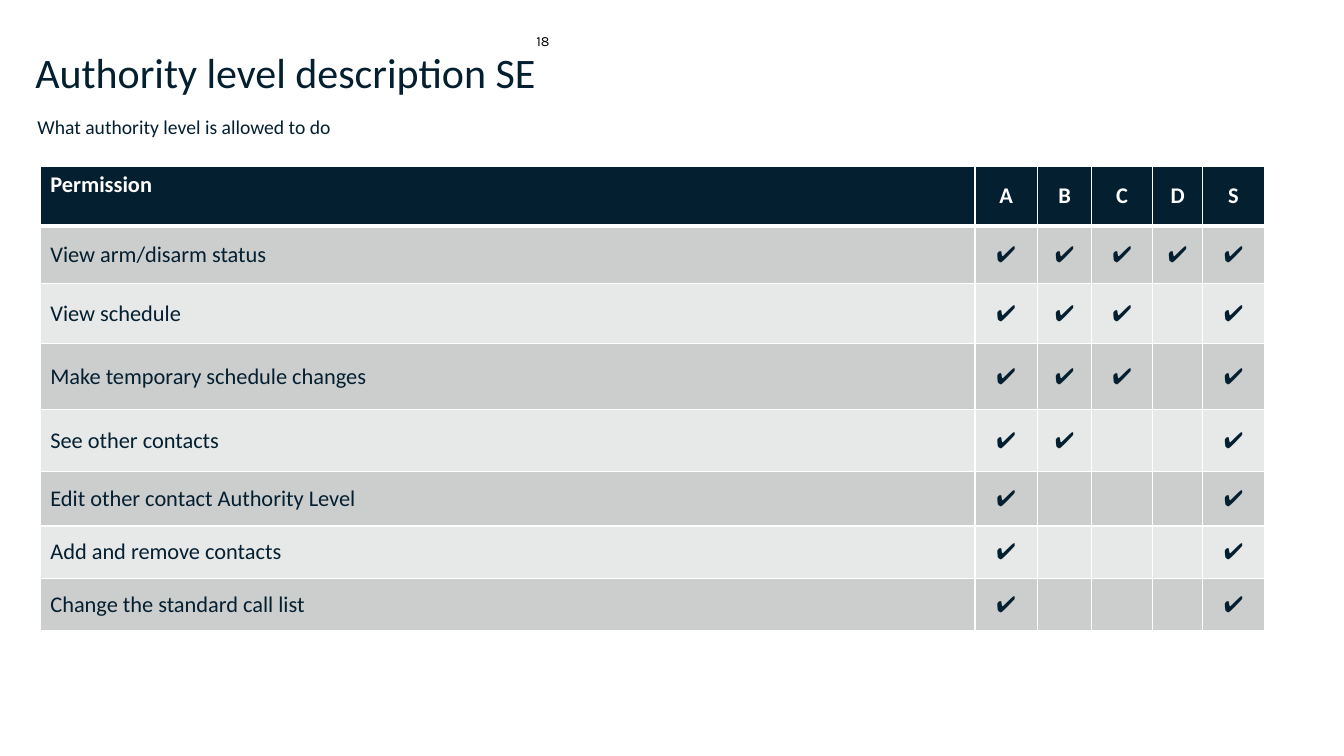
from dataclasses import dataclass

from lxml import etree
from pptx import Presentation
from pptx import util as u
from pptx.dml.color import RGBColor
from pptx.enum import text
from pptx.oxml.ns import qn

EMU_PER_PX = 9144  # 100 px to the inch


@dataclass(frozen=True)
class Theme:
    navy: str = "031F30"
    white: str = "FFFFFF"
    black: str = "000000"
    dark_band: str = "CCCDCD"
    light_band: str = "E7E8E8"
    body_font: str = "Calibri"
    number_font: str = "Karla"
    title_size: int = 30
    table_size: int = 16
    subtitle_size: int = 14
    number_size: int = 10
    thin_border: int = 1
    header_border: int = 3


THEME = Theme()
LEFT, CENTER, RIGHT = text.PP_ALIGN.LEFT, text.PP_ALIGN.CENTER, text.PP_ALIGN.RIGHT

LEVELS = "ABCDS"
PERMISSIONS = [
    ("View arm/disarm status", "ABCDS"),
    ("View schedule", "ABCS"),
    ("Make temporary schedule changes", "ABCS"),
    ("See other contacts", "ABS"),
    ("Edit other contact Authority Level", "AS"),
    ("Add and remove contacts", "AS"),
    ("Change the standard call list", "AS"),
]
COLUMN_WIDTHS = [927, 62, 54, 60, 50, 61]
ROW_HEIGHTS = [59, 57, 60, 65, 62, 54, 52, 52]


def px(length):
    return u.Emu(length * EMU_PER_PX)


def write(text_frame, words, *, size, color, font=THEME.body_font, bold=False,
          align=LEFT, line_spacing=None):
    paragraph = text_frame.paragraphs[0]
    paragraph.alignment = align
    if line_spacing:
        paragraph.line_spacing = line_spacing
    run = paragraph.add_run()
    run.text = words
    run.font.name = font
    run.font.size = u.Pt(size)
    run.font.bold = bold
    run.font.color.rgb = RGBColor.from_string(color)


def add_text(slide, box, words, **text_format):
    shape = slide.shapes.add_textbox(*map(px, box))
    frame = shape.text_frame
    frame.word_wrap = True
    frame.margin_left = frame.margin_top = frame.margin_right = frame.margin_bottom = 0
    write(frame, words, **text_format)


def set_borders(cell, top, bottom):
    properties = cell._tc.get_or_add_tcPr()
    thin = THEME.thin_border
    for edge, width in (("L", thin), ("R", thin), ("T", top), ("B", bottom)):
        line = etree.SubElement(properties, qn(f"a:ln{edge}"), w=str(u.Pt(width)))
        fill = etree.SubElement(line, qn("a:solidFill"))
        etree.SubElement(fill, qn("a:srgbClr"), val=THEME.white)


def style_cell(cell, row):
    thin, thick = THEME.thin_border, THEME.header_border
    set_borders(cell, top=thick if row == 1 else thin, bottom=thick if row == 0 else thin)
    band = THEME.dark_band if row % 2 else THEME.light_band
    cell.fill.solid()
    cell.fill.fore_color.rgb = RGBColor.from_string(band if row else THEME.navy)


def add_permission_table(slide, left, top):
    rows = [["Permission", *LEVELS]]
    for permission, allowed in PERMISSIONS:
        rows.append([permission, *("✔" if level in allowed else "" for level in LEVELS)])

    table = slide.shapes.add_table(
        len(rows), len(COLUMN_WIDTHS), px(left), px(top),
        px(sum(COLUMN_WIDTHS)), px(sum(ROW_HEIGHTS))).table
    for column, width in zip(table.columns, COLUMN_WIDTHS):
        column.width = px(width)
    for table_row, height in zip(table.rows, ROW_HEIGHTS):
        table_row.height = px(height)

    for row, values in enumerate(rows):
        for column, words in enumerate(values):
            cell = table.cell(row, column)
            style_cell(cell, row)
            if row or column:
                cell.vertical_anchor = text.MSO_ANCHOR.MIDDLE
            if words:
                write(cell.text_frame, words, size=THEME.table_size,
                      color=THEME.navy if row else THEME.white,
                      bold=row == 0 or column > 0,
                      align=CENTER if column else LEFT)


def main():
    presentation = Presentation()
    presentation.slide_width, presentation.slide_height = px(1333), px(750)
    slide = presentation.slides.add_slide(presentation.slide_layouts[6])

    # Page number
    add_text(slide, (465, 32, 80, 63), "18", size=THEME.number_size,
             color=THEME.black, font=THEME.number_font, align=RIGHT)

    # Permissions by authority level
    add_permission_table(slide, 40, 165)

    # Title and subtitle
    add_text(slide, (35, 55, 1049, 59), "Authority level description SE",
             size=THEME.title_size, color=THEME.navy, line_spacing=0.83)
    add_text(slide, (37, 118, 1049, 60), "What authority level is allowed to do",
             size=THEME.subtitle_size, color=THEME.navy, line_spacing=0.83)

    presentation.save("out.pptx")


if __name__ == "__main__":
    main()
